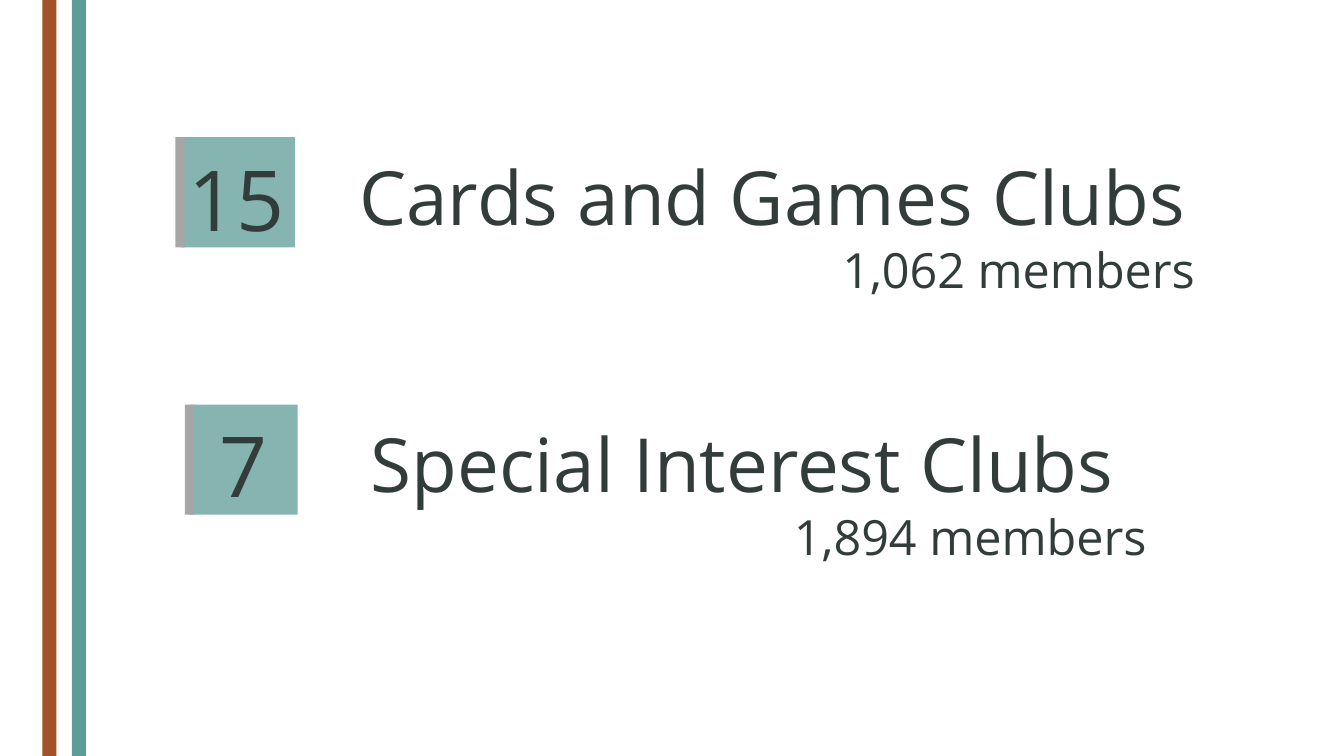
import pptx
import pptx.util
import pptx.dml.color
import pptx.enum.shapes
import pptx.enum.text
import pptx.oxml.ns
import lxml.etree

Inches = pptx.util.Inches
Pt = pptx.util.Pt
RGBColor = pptx.dml.color.RGBColor

INK = RGBColor(0x32, 0x3C, 0x3B)
TEAL = RGBColor(0x5E, 0x9C, 0x98)
RUST = RGBColor(0xA3, 0x51, 0x2B)
GREY = RGBColor(0xA6, 0xA6, 0xA6)


class Canvas:
    font = "Open Sans"
    ink = INK
    lead = 1.4

    def __init__(self, slide):
        self.slide = slide

    def block(self, x, y, w, h, color, alpha=100):
        shape = self.slide.shapes.add_shape(
            pptx.enum.shapes.MSO_SHAPE.RECTANGLE,
            Inches(x), Inches(y), Inches(w), Inches(h))
        shape.shadow.inherit = False
        shape.fill.solid()
        shape.fill.fore_color.rgb = color
        shape.line.fill.background()
        if alpha < 100:
            tag = pptx.oxml.ns.qn("a:srgbClr")
            node = next(shape.fill._xPr.iter(tag))
            lxml.etree.SubElement(
                node, pptx.oxml.ns.qn("a:alpha"), val=str(alpha * 1000))

    def text(self, x, y, w, h, words, size):
        box = self.slide.shapes.add_textbox(
            Inches(x), Inches(y), Inches(w), Inches(h))
        frame = box.text_frame
        frame.margin_left = frame.margin_right = 0
        frame.margin_top = frame.margin_bottom = 0
        frame.word_wrap = True
        frame.text = words
        line = frame.paragraphs[0]
        line.alignment = pptx.enum.text.PP_ALIGN.CENTER
        line.line_spacing = Pt(size * self.lead)
        font = line.runs[0].font
        font.name = self.font
        font.size = Pt(size)
        font.color.rgb = self.ink

    def badge(self, x, y, w, count, left, top, width):
        self.block(x, y, w, 1.64, TEAL, 75)
        self.text(left, top, width, 1.77, count, 90)
        self.block(x - 0.08, y, 0.14, 1.64, GREY)


def main():
    deck = pptx.Presentation()
    deck.slide_width = Inches(20)
    deck.slide_height = Inches(11.25)
    page = Canvas(deck.slides.add_slide(deck.slide_layouts[6]))

    page.badge(2.69, 2.04, 1.7, "15", 2.76, 1.94, 1.52)
    page.text(4.59, 2.02, 13.82, 1.57, "Cards and Games Clubs", 80)
    page.text(12.43, 3.42, 5.46, 0.97, "1,062 members", 52)

    page.badge(2.83, 6.02, 1.6, "7", 3.26, 5.91, 0.73)
    page.text(4.77, 6, 12.56, 1.57, "Special Interest Clubs", 80)
    page.text(11.71, 7.4, 5.46, 0.97, "1,894 members", 52)

    for x, color in ((1.07, TEAL), (0.63, RUST)):
        page.block(x, 0, 0.21, 11.25, color)

    deck.save("out.pptx")


if __name__ == "__main__":
    main()
